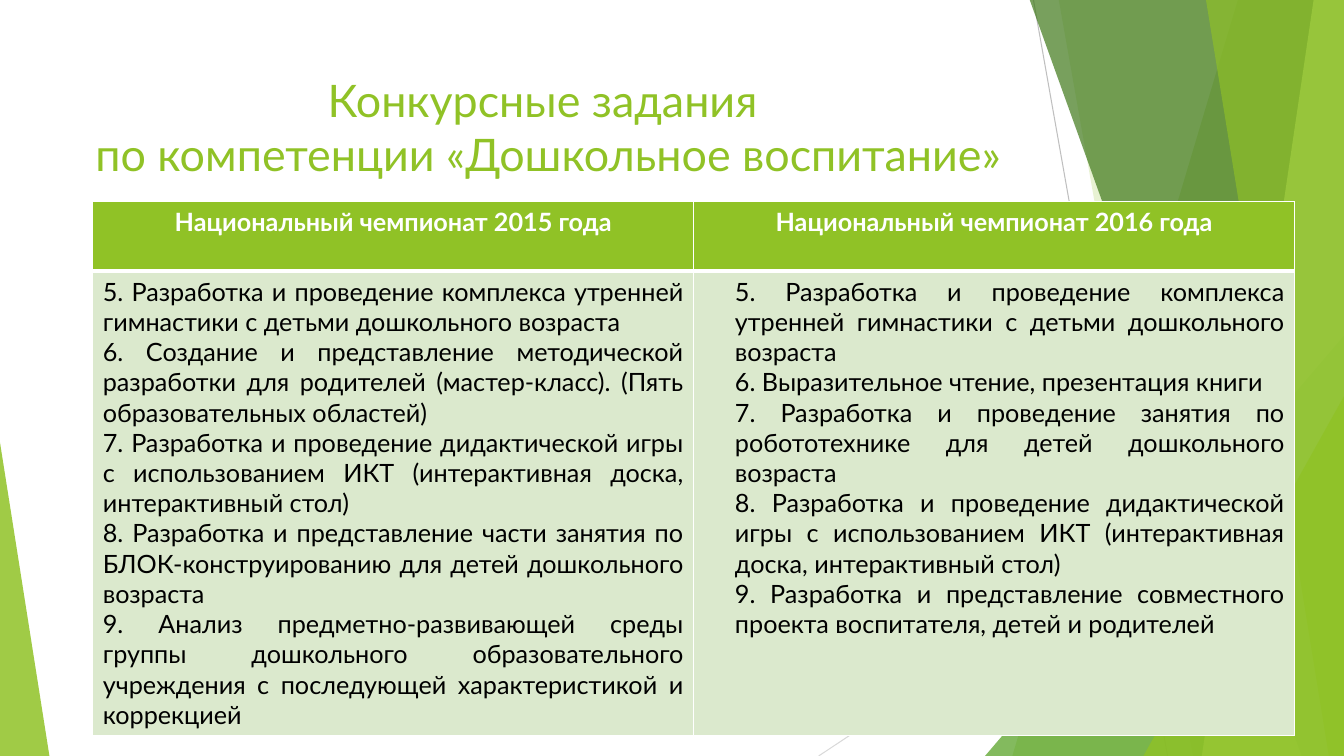
import lxml.etree
import pptx
import pptx.dml.color
import pptx.enum.shapes
import pptx.enum.text
import pptx.oxml
import pptx.oxml.ns
import pptx.util

ALIGN = pptx.enum.text.PP_ALIGN
qn = pptx.oxml.ns.qn

WIDTH, HEIGHT = 1333, 750
GREEN, PALE, WHITE, BLACK = "90C226", "DBE9CD", "FFFFFF", "000000"

RAYS = [((1025, 0), (1158, 750), "BFBFBF"), ((1333, 403), (812, 750), "D9D9D9")]
BANDS = [
    (1228, 1004, GREEN, 30),
    (1050, 1183, GREEN, 20),
    (1021, 1291, "3F7819", 70),
    (1303, 1192, "C0E474", 70),
    (1196, 1318, GREEN, 65),
]
LOWER_WEDGE = ((977, 333, 356, 417), 1, "54A021", 72)
RIGHT_WEDGE = ((1134, 393, 199, 357), 1, GREEN, 80)
LEFT_WEDGE = ((0, 439, 49, 311), 0, GREEN, 85)

TITLE = "Конкурсные задания \vпо компетенции «Дошкольное воспитание»"
CHAMPIONSHIPS = [
    ("Национальный чемпионат 2015 года", 0, [
        "5. Разработка и проведение комплекса утренней гимнастики с детьми дошкольного возраста",
        "6. Создание и представление методической разработки для родителей (мастер-класс). (Пять образовательных областей)",
        "7. Разработка и проведение дидактической игры с использованием ИКТ (интерактивная доска, интерактивный стол)",
        "8. Разработка и представление части занятия по БЛОК-конструированию для детей дошкольного возраста",
        "9. Анализ предметно-развивающей среды группы дошкольного образовательного учреждения с последующей характеристикой и коррекцией",
    ]),
    ("Национальный чемпионат 2016 года", 31, [
        "5. Разработка и проведение комплекса утренней гимнастики с детьми дошкольного возраста",
        "6. Выразительное чтение, презентация книги",
        "7. Разработка и проведение занятия по робототехнике для детей дошкольного возраста",
        "8. Разработка и проведение дидактической игры с использованием ИКТ (интерактивная доска, интерактивный стол) ",
        "9. Разработка и представление совместного проекта воспитателя, детей и родителей ",
    ]),
]


def px(length):
    return pptx.util.Emu(length * 9144)


def color(code):
    return pptx.dml.color.RGBColor.from_string(code)


class FacetSlide:
    font = {"name": "Lato", "bold": False}

    def __init__(self, deck):
        self.slide = deck.slides.add_slide(deck.slide_layouts[5])
        self.shapes = self.slide.shapes

    def ray(self, start, end, code):
        line = self.shapes.add_connector(
            pptx.enum.shapes.MSO_CONNECTOR.STRAIGHT, *map(px, start + end))
        line.line.color.rgb = color(code)
        line.line.width = pptx.util.Pt(0.75)
        lxml.etree.SubElement(line._element.spPr, qn("a:effectLst"))

    def paint(self, shape, code, opacity):
        shape.shadow.inherit = False
        shape.line.fill.background()
        shape.fill.solid()
        shape.fill.fore_color.rgb = color(code)
        tint = shape._element.spPr.find(qn("a:solidFill"))[0]
        lxml.etree.SubElement(tint, qn("a:alpha"), val=str(opacity * 1000))

    def band(self, top_x, bottom_x, code, opacity):
        outline = self.shapes.build_freeform(top_x, -1, scale=px(1))
        outline.add_line_segments(
            [(WIDTH, -1), (WIDTH, HEIGHT), (bottom_x, HEIGHT)], close=True)
        self.paint(outline.convert_to_shape(), code, opacity)

    def wedge(self, box, apex, code, opacity):
        triangle = self.shapes.add_shape(
            pptx.enum.shapes.MSO_SHAPE.ISOSCELES_TRIANGLE, *map(px, box))
        triangle.adjustments[0] = apex
        self.paint(triangle, code, opacity)

    def style(self, paragraph, align, size, code, **changes):
        paragraph.alignment = align
        values = {**self.font, "size": pptx.util.Pt(size), **changes}
        for run in paragraph.runs:
            run.font.color.rgb = color(code)
            for name, value in values.items():
                setattr(run.font, name, value)

    def title(self, text, box):
        heading = self.shapes.title
        for name, value in zip(("left", "top", "width", "height"), box):
            setattr(heading, name, px(value))
        frame = heading.text_frame
        frame.text = text
        layout = {"word_wrap": True,
                  "auto_size": pptx.enum.text.MSO_AUTO_SIZE.NONE,
                  "vertical_anchor": pptx.enum.text.MSO_ANCHOR.TOP}
        for name, value in layout.items():
            setattr(frame, name, value)
        self.style(frame.paragraphs[0], ALIGN.CENTER, 32, GREEN)
        self.shapes._spTree.append(heading._element)

    def cell(self, cell, lines, fill, borders, align, code, indent=0, **changes):
        cell.fill.solid()
        cell.fill.fore_color.rgb = color(fill)
        cell.text = "\n".join(lines)
        for paragraph in cell.text_frame.paragraphs:
            self.style(paragraph, align, 18, code, **changes)
            if indent:
                paragraph._p.get_or_add_pPr().set("marL", str(px(indent)))
        properties = cell._tc.get_or_add_tcPr()
        for place, (side, points) in enumerate(borders.items()):
            edge = pptx.oxml.parse_xml(
                f'<a:ln{side} {pptx.oxml.ns.nsdecls("a")} w="{points * 12700}">'
                f'<a:solidFill><a:srgbClr val="{WHITE}"/></a:solidFill></a:ln{side}>')
            properties.insert(place, edge)

    def table(self, championships, box, row_heights):
        grid = self.shapes.add_table(
            len(row_heights), len(championships), *map(px, box)).table
        for row, height in zip(grid.rows, row_heights):
            row.height = px(height)
        for column, (heading, indent, tasks) in enumerate(championships):
            self.cell(grid.cell(0, column), [heading], GREEN,
                      {"L": 1, "R": 1, "T": 1, "B": 3}, ALIGN.CENTER, WHITE, bold=True)
            self.cell(grid.cell(1, column), tasks, PALE,
                      {"L": 1, "R": 1, "T": 3, "B": 1}, ALIGN.JUSTIFY, BLACK, indent)


def main():
    deck = pptx.Presentation()
    deck.slide_width, deck.slide_height = px(WIDTH), px(HEIGHT)
    page = FacetSlide(deck)
    for ray in RAYS:
        page.ray(*ray)
    for band in BANDS[:2]:
        page.band(*band)
    page.wedge(*LOWER_WEDGE)
    for band in BANDS[2:]:
        page.band(*band)
    page.wedge(*RIGHT_WEDGE)
    page.wedge(*LEFT_WEDGE)
    page.title(TITLE, (74, 67, 940, 144))
    page.table(CHAMPIONSHIPS, (92, 200, 1192, 530), (69, 461))
    deck.save("out.pptx")


if __name__ == "__main__":
    main()
